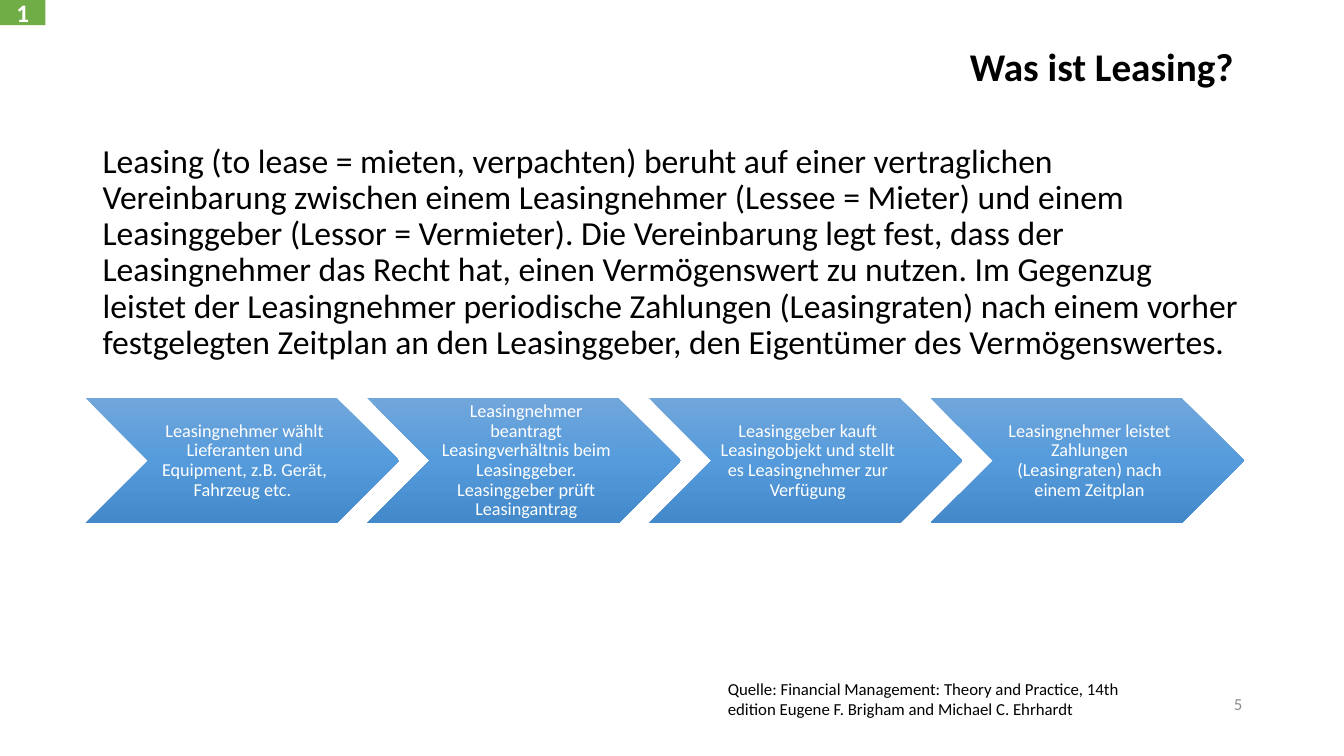
from dataclasses import dataclass

from lxml import etree
from pptx import Presentation
from pptx import util as u
from pptx.dml.color import RGBColor
from pptx.enum import shapes, text
from pptx.oxml import ns

PX = 9144


@dataclass(frozen=True)
class Theme:
    """Colours and type sizes of the slide."""
    font: str = "Calibri"
    ink: str = "000000"
    pale: str = "FFFFFF"
    grey: str = "8C8C8C"
    green: str = "70AD47"
    blues: tuple = ("71A6DB", "559BDB", "448ACA")
    title: int = 28
    body: int = 24
    badge: int = 18
    step: int = 13
    note: int = 12


T = Theme()
LEFT, MID, RIGHT = text.PP_ALIGN.LEFT, text.PP_ALIGN.CENTER, text.PP_ALIGN.RIGHT
TOP, MIDDLE = text.MSO_ANCHOR.TOP, text.MSO_ANCHOR.MIDDLE

LEASE = (
    "Leasing (to lease = mieten, verpachten) beruht auf einer vertraglichen "
    "Vereinbarung zwischen einem Leasingnehmer (Lessee = Mieter) und einem "
    "Leasinggeber (Lessor = Vermieter). Die Vereinbarung legt fest, dass der "
    "Leasingnehmer das Recht hat, einen Vermögenswert zu nutzen. Im Gegenzug "
    "leistet der Leasingnehmer periodische Zahlungen (Leasingraten) nach einem "
    "vorher festgelegten Zeitplan an den Leasinggeber, den Eigentümer des "
    "Vermögenswertes."
)
STEPS = (
    "Leasingnehmer wählt Lieferanten und Equipment, z.B. Gerät, Fahrzeug etc. ",
    "Leasingnehmer beantragt Leasingverhältnis beim Leasinggeber. "
    "Leasinggeber prüft Leasingantrag",
    "Leasinggeber kauft Leasingobjekt und stellt es Leasingnehmer zur Verfügung",
    "Leasingnehmer leistet Zahlungen (Leasingraten) nach einem Zeitplan",
)
SOURCE = (
    "Quelle: Financial Management: Theory and Practice, 14th edition "
    "Eugene F. Brigham and Michael C. Ehrhardt"
)


def place(box):
    """Turn a px box into EMU lengths."""
    return [u.Emu(round(n * PX)) for n in box]


def put(item, words, size, ink, align=LEFT, anchor=TOP, bold=False,
        lead=1.0, pad=(10, 5, 10, 5)):
    """Write one styled paragraph into a shape."""
    frame = item.text_frame
    frame.word_wrap = True
    frame.vertical_anchor = anchor
    for side, gap in zip(("left", "top", "right", "bottom"), place(pad)):
        setattr(frame, "margin_" + side, gap)
    para = frame.paragraphs[0]
    para.text = words
    para.alignment = align
    para.line_spacing = lead
    look = {"name": T.font, "size": u.Pt(size), "bold": bold}
    for key, val in look.items():
        setattr(para.font, key, val)
    para.font.color.rgb = RGBColor.from_string(ink)


def label(slide, box, words, size, ink, **style):
    """Add a text box."""
    put(slide.shapes.add_textbox(*place(box)), words, size, ink, **style)


def plain(slide, kind, box):
    """Add a shape with neither line nor shadow."""
    item = slide.shapes.add_shape(kind, *place(box))
    item.shadow.inherit = False
    item.line.fill.background()
    return item


def shade(item):
    """Fill a shape with the blue gradient, from top to bottom."""
    item.fill.gradient()
    grad = item._element.spPr.find(ns.qn("a:gradFill"))
    for part in list(grad):
        grad.remove(part)
    stops = etree.SubElement(grad, ns.qn("a:gsLst"))
    for i, tone in enumerate(T.blues):
        stop = etree.SubElement(stops, ns.qn("a:gs"), pos=str(i * 50000))
        etree.SubElement(stop, ns.qn("a:srgbClr"), val=tone)
    etree.SubElement(grad, ns.qn("a:lin"), ang="5400000", scaled="0")


def badge(slide, box):
    """Draw the chapter number in the corner."""
    item = plain(slide, shapes.MSO_SHAPE.RECTANGLE, box)
    item.fill.solid()
    item.fill.fore_color.rgb = RGBColor.from_string(T.green)
    put(item, "1", T.badge, T.pale, align=MID, anchor=MIDDLE, bold=True)


def head(slide, box):
    """Set the title and the text below it."""
    x, y, w, h = box
    label(slide, (x, y, w, 57), "Was ist Leasing? ", T.title, T.ink,
          align=RIGHT, anchor=MIDDLE, bold=True, lead=0.9)
    label(slide, (x, y + 98, w, h - 98), LEASE, T.body, T.ink, lead=0.9)


def chain(slide, box):
    """Spread the steps as chevrons over the box."""
    x, y, w, h = box
    wide = 311
    pitch = (w - wide) / (len(STEPS) - 1)
    for i, words in enumerate(STEPS):
        item = plain(slide, shapes.MSO_SHAPE.CHEVRON,
                     (x + i * pitch, y, wide, h))
        shade(item)
        put(item, words, T.step, T.pale, align=MID, anchor=MIDDLE,
            lead=0.9, pad=(6, 2, 2, 2))


def foot(slide, box):
    """Set the source and the page number."""
    x, y, w, h = box
    label(slide, (x + w - 300, y + 10, 300, h - 10), "5", T.note, T.grey,
          align=RIGHT, anchor=MIDDLE)
    label(slide, (x, y, 422, h), SOURCE, T.note, T.ink)


def main():
    """Build and save the slide."""
    deck = Presentation()
    deck.slide_width, deck.slide_height = place((1333, 750))
    slide = deck.slides.add_slide(deck.slide_layouts[6])
    head(slide, (92, 40, 1150, 606))
    chain(slide, (85, 395, 1149, 124))
    badge(slide, (0, 0, 45, 25))
    foot(slide, (712, 668, 530, 50))
    deck.save("out.pptx")


if __name__ == "__main__":
    main()
